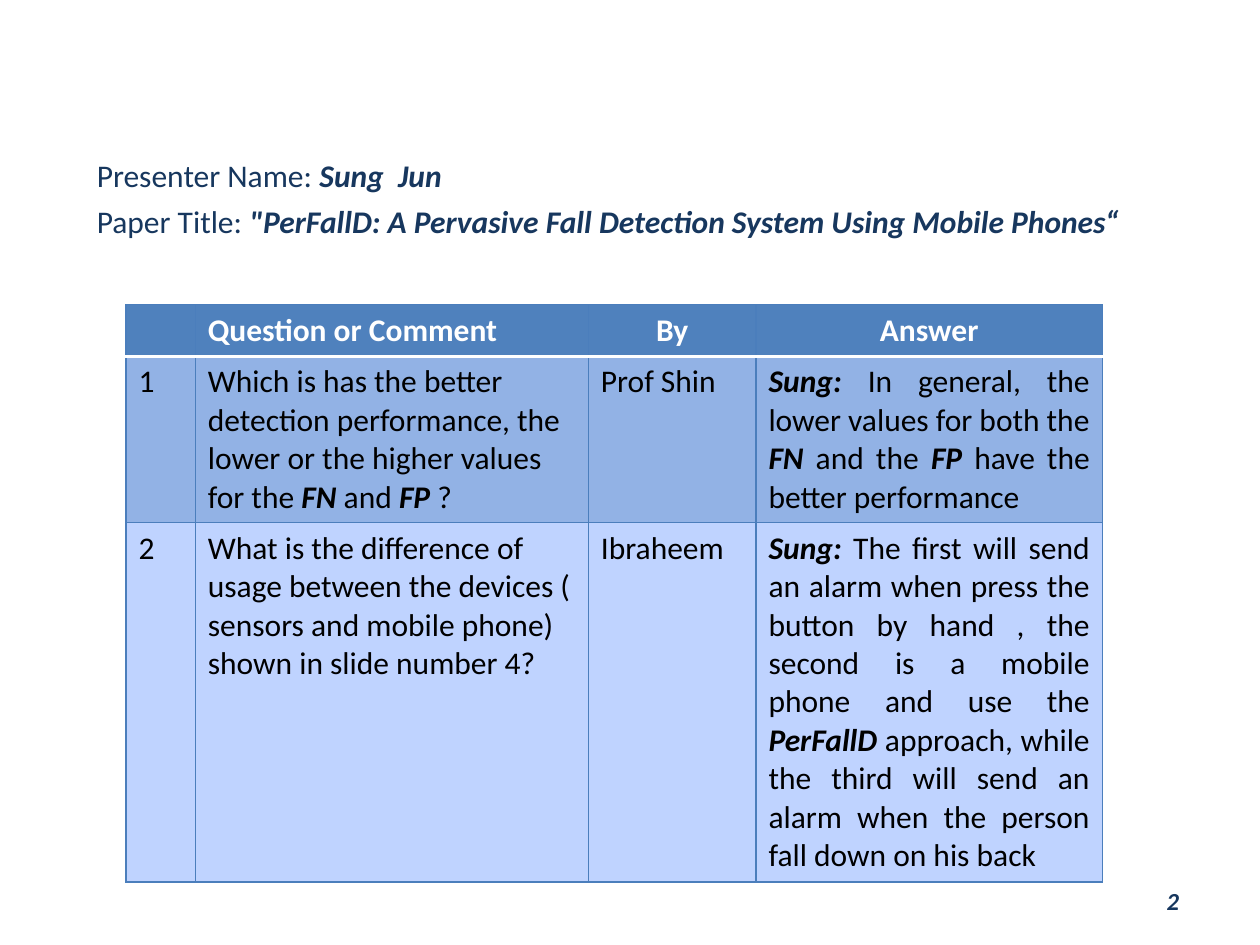
from lxml import etree
from pptx import Presentation
from pptx.dml.color import RGBColor
from pptx.enum.text import MSO_ANCHOR, PP_ALIGN
from pptx.oxml.ns import qn
from pptx.util import Inches, Pt

NAVY = RGBColor(0x17, 0x37, 0x5E)
BLUE = RGBColor(0x4F, 0x81, 0xBD)
MID = RGBColor(0x92, 0xB2, 0xE5)
PALE = RGBColor(0xBF, 0xD3, 0xFF)
EDGE = RGBColor(0x4B, 0x7E, 0xBC)
WHITE = RGBColor(0xFF, 0xFF, 0xFF)
BLACK = RGBColor(0x00, 0x00, 0x00)
TOP, CENTRE = MSO_ANCHOR.TOP, MSO_ANCHOR.MIDDLE
LEFT, MID_COL, RIGHT, JUSTIFY = (
    PP_ALIGN.LEFT, PP_ALIGN.CENTER, PP_ALIGN.RIGHT, PP_ALIGN.JUSTIFY)

# Text between asterisks is bold italic.
INTRO = [
    "Presenter Name: *Sung  Jun*",
    'Paper Title: *"PerFallD: A Pervasive Fall Detection System Using Mobile Phones“*',
]
ROWS = [
    ["", "Question or Comment", "By", "Answer"],
    ["1",
     "Which is has the better detection performance, the lower or the higher "
     "values for the *FN* and *FP* ?",
     "Prof Shin",
     "*Sung: *In general, the lower values for both the *FN* and the *FP* "
     "have the better performance"],
    ["2",
     "What is the difference of usage between the devices ( sensors and "
     "mobile phone) shown in slide number 4?",
     "Ibraheem",
     "*Sung: *The first will send an alarm when press the button by hand , "
     "the second is a mobile phone and use the *PerFallD* approach, while the "
     "third will send an alarm when the person fall down on his back"],
]
WIDTHS = [0.55, 3.12, 1.33, 2.75]
HEIGHTS = [0.41, 1.32, 2.85]
FILLS = [BLUE, MID, PALE]
HEAD_ALIGN = [LEFT, LEFT, MID_COL, MID_COL]
BODY_ALIGN = [LEFT, LEFT, LEFT, JUSTIFY]


def write(para, text, color, size=18, bold=False, align=LEFT):
    para.alignment = align
    form = {"name": "Calibri", "size": Pt(size)}
    for name, value in form.items():
        setattr(para.font, name, value)
    for i, part in enumerate(text.split("*")):
        if not part:
            continue
        run = para.add_run()
        run.text = part
        strong = i % 2 == 1
        look = {**form, "bold": bold or strong, "italic": strong}
        for name, value in look.items():
            setattr(run.font, name, value)
        run.font.color.rgb = color


def add_text(slide, box, lines, color, anchor=TOP, gap=0, **look):
    frame = slide.shapes.add_textbox(*map(Inches, box)).text_frame
    frame.word_wrap = True
    frame.vertical_anchor = anchor
    for i, line in enumerate(lines):
        para = frame.add_paragraph() if i else frame.paragraphs[0]
        if i:
            para.space_before = Pt(gap)
        write(para, line, color, **look)
    return frame


def set_edges(cell, edges):
    """Draw cell borders; edges maps a side (L, R, T, B) to colour and points."""
    props = cell._tc.get_or_add_tcPr()
    for i, (side, (color, width)) in enumerate(edges.items()):
        line = etree.Element(qn(f"a:ln{side}"), w=str(Pt(width)))
        fill = etree.SubElement(line, qn("a:solidFill"))
        etree.SubElement(fill, qn("a:srgbClr"), val=str(color))
        props.insert(i, line)


def add_grid(slide):
    area = map(Inches, (1, 2.42, sum(WIDTHS), sum(HEIGHTS)))
    table = slide.shapes.add_table(len(ROWS), len(WIDTHS), *area).table
    for col, width in zip(table.columns, WIDTHS):
        col.width = Inches(width)
    thin, thick = (EDGE, 0.75), (WHITE, 2)
    for r, texts in enumerate(ROWS):
        table.rows[r].height = Inches(HEIGHTS[r])
        head = r == 0
        aligns = HEAD_ALIGN if head else BODY_ALIGN
        edges = {"L": thin, "R": thin,
                 "T": thick if r == 1 else thin,
                 "B": thick if head else thin}
        for c, text in enumerate(texts):
            cell = table.cell(r, c)
            cell.fill.solid()
            cell.fill.fore_color.rgb = FILLS[r]
            set_edges(cell, edges)
            write(cell.text_frame.paragraphs[0], text,
                  WHITE if head else BLACK, bold=head, align=aligns[c])


def main():
    deck = Presentation()
    deck.slide_width, deck.slide_height = Inches(10), Inches(7.5)
    slide = deck.slides.add_slide(deck.slide_layouts[6])
    intro = add_text(slide, (0.67, 0.83, 8.67, 1.5), INTRO, NAVY, gap=4.3)
    intro.margin_top = Inches(0.41)
    add_grid(slide)
    add_text(slide, (7.17, 6.95, 2.33, 0.4), ["*2 *"], NAVY,
             anchor=CENTRE, size=14, align=RIGHT)
    deck.save("out.pptx")


if __name__ == "__main__":
    main()
